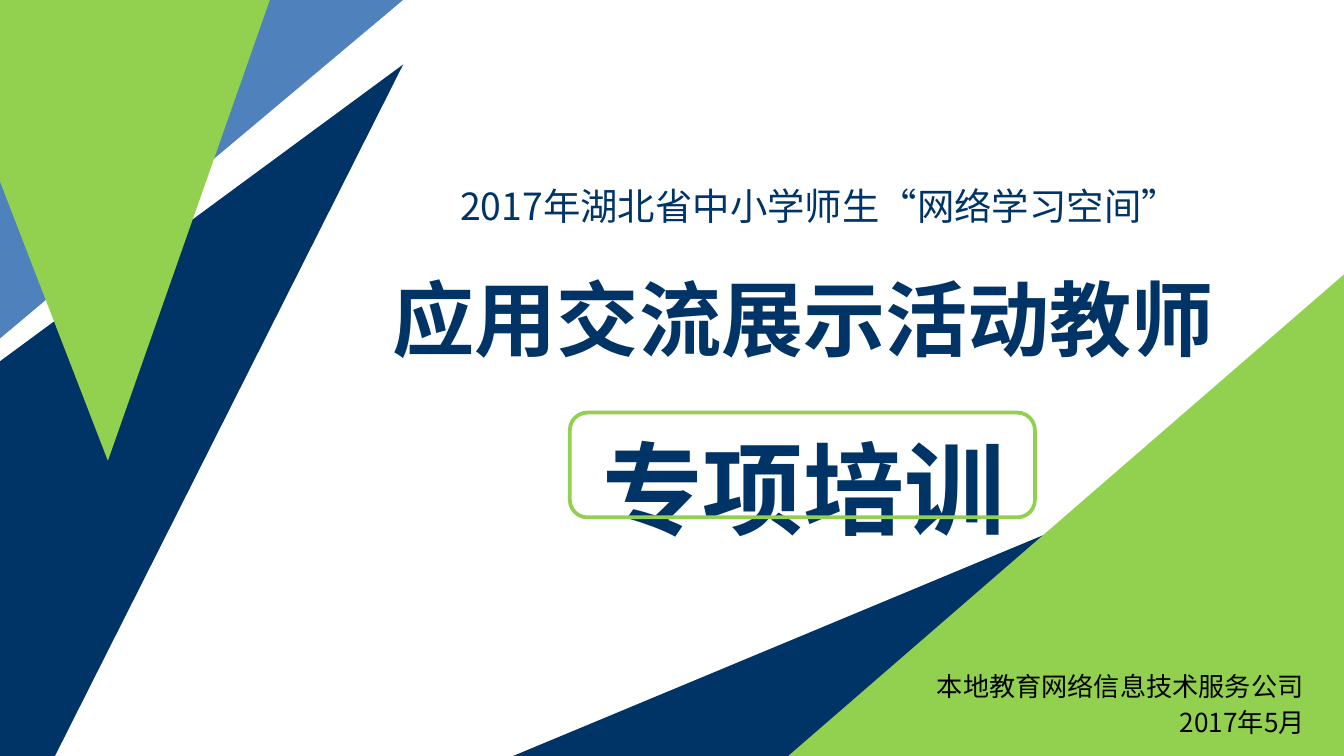
from lxml.etree import SubElement
from pptx import Presentation
from pptx.dml.color import RGBColor
from pptx.enum.shapes import MSO_SHAPE as Preset
from pptx.enum.text import MSO_AUTO_SIZE as AutoSize, PP_ALIGN as Align
from pptx.oxml.ns import qn
from pptx.util import Cm, Pt

COLORS = {"navy": "003366", "green": "92D050", "blue": "4F81BD", "black": "000000"}
FONT = "Noto Sans CJK SC"

presentation = Presentation()
presentation.slide_width = Cm(25.4)
presentation.slide_height = Cm(14.29)
slide = presentation.slides.add_slide(presentation.slide_layouts[6])
shapes = slide.shapes


def paint(shape, color):
    """Give a shape a flat fill with no outline or shadow."""
    shape.shadow.inherit = False
    shape.fill.solid()
    shape.fill.fore_color.rgb = RGBColor.from_string(COLORS[color])
    shape.line.fill.background()


def add_text(lines, box, sizes, color="navy", align=Align.CENTER, bold=False, spacing=None):
    """Add a text box with one paragraph per line, each in its own size."""
    text_frame = shapes.add_textbox(*map(Cm, box)).text_frame
    text_frame.word_wrap = True
    text_frame.auto_size = AutoSize.SHAPE_TO_FIT_TEXT
    for index, (line, size) in enumerate(zip(lines, sizes)):
        paragraph = text_frame.add_paragraph() if index else text_frame.paragraphs[0]
        paragraph.alignment = align
        paragraph.line_spacing = spacing
        run = paragraph.add_run()
        run.text = line
        run.font.size = Pt(size)
        run.font.bold = bold
        run.font.name = FONT
        run.font.color.rgb = RGBColor.from_string(COLORS[color])
        SubElement(run.font._element, qn("a:ea")).set("typeface", FONT)


# Decorative polygons and right triangles, from back to front
decorations = [
    ("navy", [(0, 14.29), (0, 6.83), (7.62, 1.22), (1.04, 14.29)], None),
    ("blue", (0, 0, 7.62, 6.4), "flipV"),
    ("green", [(0, 0), (5.1, 0), (2.04, 8.71), (0, 3.43)], None),
    ("navy", (9.7, 7.75, 15.7, 6.54), "flipH"),
    ("green", (14.9, 5.19, 10.5, 9.1), "flipH"),
]
for color, geometry, flip in decorations:
    if flip:
        shape = shapes.add_shape(Preset.RIGHT_TRIANGLE, *map(Cm, geometry))
        shape._element.spPr.find(qn("a:xfrm")).set(flip, "1")
    else:
        start, *others = [(Cm(x), Cm(y)) for x, y in geometry]
        builder = shapes.build_freeform(*start)
        builder.add_line_segments(others, close=True)
        shape = builder.convert_to_shape()
    paint(shape, color)

add_text(["2017年湖北省中小学师生“网络学习空间”"], (7.29, 3.33, 16.4, 1.11), [20])
add_text(["应用交流展示活动教师", "专项培训"], (6.99, 4.01, 16.4, 6.53), [44, 54],
         bold=True, spacing=1.5)
add_text(["本地教育网络信息技术服务公司"], (12.9, 12.55, 11.99, 0.86), [14],
         color="black", align=Align.RIGHT)
add_text(["2017年5月"], (19.51, 13.23, 5.4, 0.86), [14], color="black", align=Align.RIGHT)

title_frame = shapes.add_shape(Preset.ROUNDED_RECTANGLE, Cm(10.77), Cm(7.8), Cm(8.79), Cm(1.98))
title_frame.shadow.inherit = False
title_frame.fill.background()
title_frame.line.color.rgb = RGBColor.from_string(COLORS["green"])
title_frame.line.width = Pt(2)

presentation.save("out.pptx")
